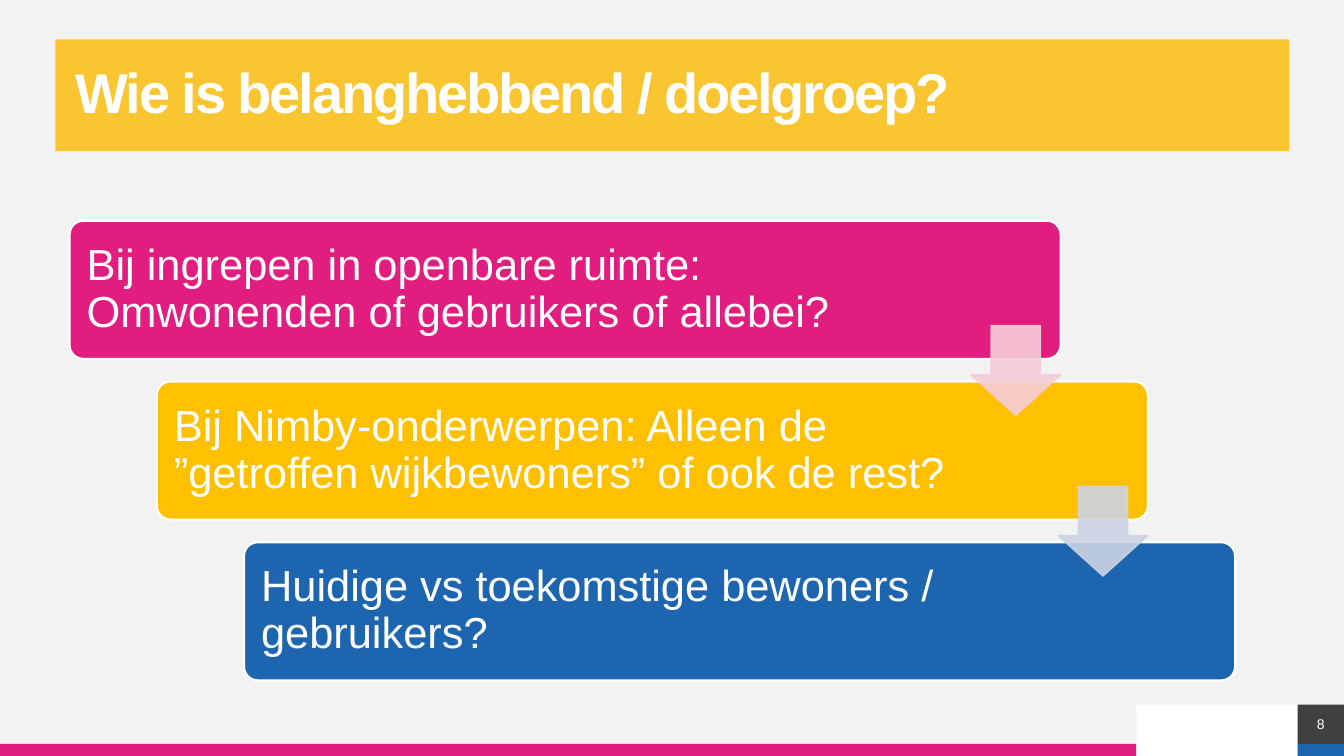
from dataclasses import dataclass

from lxml.etree import SubElement
from pptx import Presentation
from pptx.dml.color import RGBColor
from pptx.enum.shapes import MSO_SHAPE as Shape
from pptx.enum.text import MSO_ANCHOR as Anchor, PP_ALIGN as Align
from pptx.oxml.ns import qn
from pptx.util import Inches, Pt


@dataclass(frozen=True)
class Theme:
    font: str = "Arial"
    background: str = "F2F2F2"
    white: str = "FFFFFF"
    pink: str = "E11D7F"
    yellow: str = "FFC000"
    blue: str = "1D65AF"
    title_band: str = "FBBA00"
    dark: str = "404040"
    pale_pink: str = "F4CDD8"
    pale_blue: str = "CDD3E3"
    title_size: float = 40
    step_size: float = 31
    number_size: float = 10


THEME = Theme()

STEPS = [  # text, fill, right margin
    ("Bij ingrepen in openbare ruimte: Omwonenden of gebruikers of allebei?", THEME.pink, 1.53),
    ("Bij Nimby-onderwerpen: Alleen de ”getroffen wijkbewoners” of ook de rest?", THEME.yellow, 1.89),
    ("Huidige vs toekomstige bewoners / gebruikers?", THEME.blue, 1.89),
]
ARROW_COLORS = [THEME.pale_pink, THEME.pale_blue]


def paint(color_format, color, opacity=100):
    color_format.fore_color.rgb = RGBColor.from_string(color)
    if opacity < 100:
        node = color_format._xPr.find(".//" + qn("a:srgbClr"))
        SubElement(node, qn("a:alpha"), val=str(opacity * 1000))


def add_block(page, kind, box, color, opacity=100, line=None, line_width=1.0):
    block = page.shapes.add_shape(kind, *map(Inches, box))
    block.shadow.inherit = False
    block.fill.solid()
    paint(block.fill, color, opacity)
    if line:
        block.line.width = Pt(line_width)
        block.line.fill.solid()
        paint(block.line.fill, line, opacity)
    else:
        block.line.fill.background()
    return block


def write(block, text, size, margins, align=Align.LEFT, bold=False, line_spacing=0.9):
    frame = block.text_frame
    frame.word_wrap = True
    frame.vertical_anchor = Anchor.MIDDLE
    (frame.margin_left, frame.margin_top,
     frame.margin_right, frame.margin_bottom) = map(Inches, margins)
    para = frame.paragraphs[0]
    para.alignment = align
    para.line_spacing = line_spacing
    span = para.add_run()
    span.text = text
    para.font.name = THEME.font
    para.font.size = Pt(size)
    para.font.bold = bold
    para.font.color.rgb = RGBColor.from_string(THEME.white)
    return span


def add_footer(page, left, top, width, height):
    # White panel, coloured strips and page number
    number_width, panel_width, strip = 0.46, 1.6, 0.12
    number_left = left + width - number_width
    panel_left = number_left - panel_width
    strip_top = top + height - strip
    add_block(page, Shape.RECTANGLE, (panel_left, top, panel_width, height), THEME.white)
    add_block(page, Shape.RECTANGLE, (left, strip_top, panel_left - left, strip), THEME.pink)
    add_block(page, Shape.RECTANGLE, (number_left, strip_top, number_width, strip), THEME.blue)
    number = add_block(page, Shape.RECTANGLE,
                       (number_left, top, number_width, height - strip), THEME.dark)
    write(number, "8", THEME.number_size, (0, 0, 0, 0), Align.CENTER, line_spacing=1.0)


def add_title(page, box, text):
    band = add_block(page, Shape.RECTANGLE, box, THEME.title_band, opacity=80)
    span = write(band, text, THEME.title_size, (0.2, 0.2, 0.2, 0.2), bold=True)
    span.font._element.set("spc", "-150")


def add_staircase(page, left, top, width, height):
    # Rounded steps, each shifted right and down
    step_width, step_height, arrow = 9.83, 1.37, 0.89
    count = len(STEPS)
    shift = (width - step_width) / (count - 1)
    drop = (height - step_height) / (count - 1)
    for index, (text, color, right_margin) in enumerate(STEPS):
        box = (left + index * shift, top + index * drop, step_width, step_height)
        step = add_block(page, Shape.ROUNDED_RECTANGLE, box, color,
                         line=THEME.white, line_width=1.5)
        step.adjustments[0] = 0.1
        write(step, text, THEME.step_size, (0.13, 0.13, right_margin, 0.13))

    # Arrows at the right edge, bridging one step to the next
    for index, color in enumerate(ARROW_COLORS):
        box = (left + index * shift + step_width - arrow,
               top + index * drop + 1.04, arrow, arrow)
        pointer = add_block(page, Shape.DOWN_ARROW, box, color, opacity=90, line=color)
        # Head length first, then shaft width
        pointer.adjustments[0], pointer.adjustments[1] = 0.55, 0.45


def main():
    deck = Presentation()
    deck.slide_width, deck.slide_height = Inches(13.33), Inches(7.5)
    page = deck.slides.add_slide(deck.slide_layouts[6])
    page.background.fill.solid()
    paint(page.background.fill, THEME.background)

    add_footer(page, 0, 6.99, 13.33, 0.51)
    add_title(page, (0.55, 0.39, 12.24, 1.11), "Wie is belanghebbend / doelgroep?")
    add_staircase(page, 0.69, 2.19, 11.56, 4.56)
    deck.save("out.pptx")


if __name__ == "__main__":
    main()
